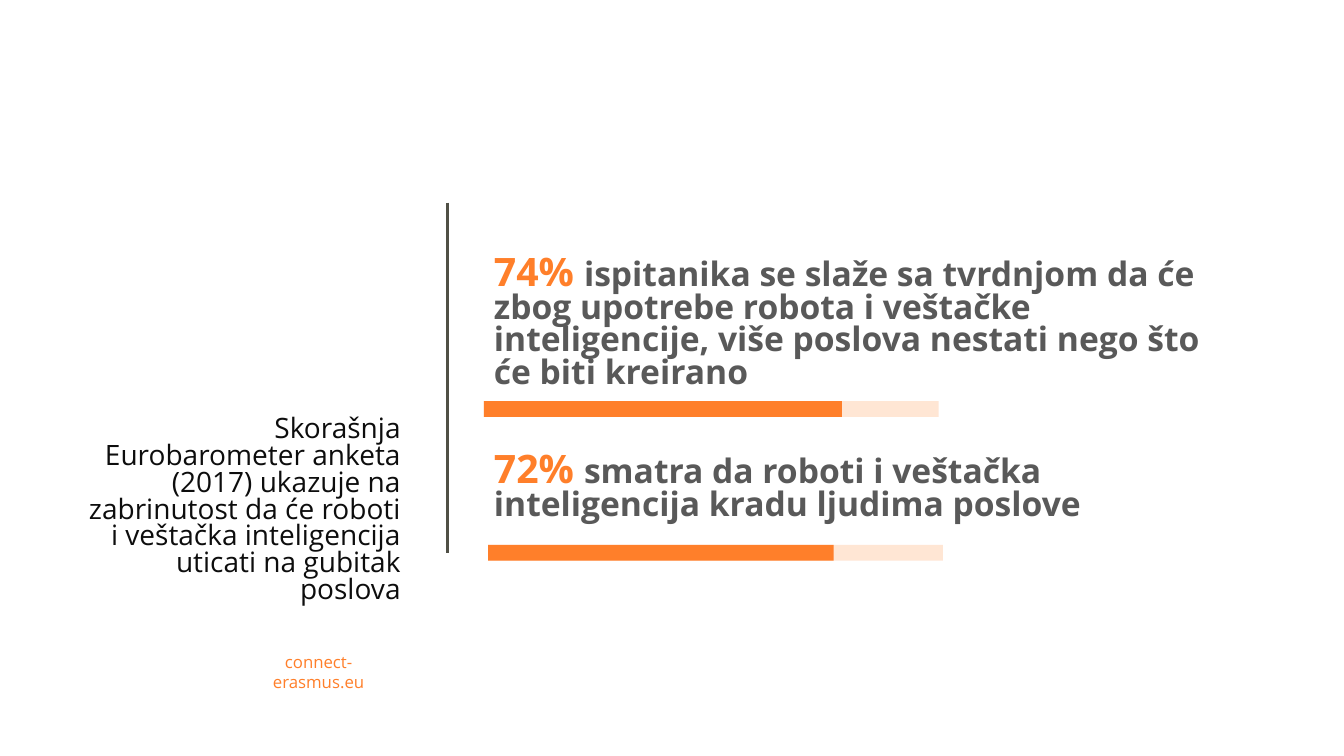
from dataclasses import dataclass

from lxml import etree
from pptx import Presentation
from pptx.dml.color import RGBColor
from pptx.enum.shapes import MSO_CONNECTOR, MSO_SHAPE
from pptx.enum.text import MSO_ANCHOR, PP_ALIGN
from pptx.oxml.ns import qn
from pptx.slide import Slide
from pptx.text.text import TextFrame
from pptx.util import Emu, Pt

STRAIGHT = MSO_CONNECTOR.STRAIGHT
RECTANGLE = MSO_SHAPE.RECTANGLE
TOP, MIDDLE, BOTTOM = MSO_ANCHOR.TOP, MSO_ANCHOR.MIDDLE, MSO_ANCHOR.BOTTOM
LEFT, CENTER, RIGHT = PP_ALIGN.LEFT, PP_ALIGN.CENTER, PP_ALIGN.RIGHT
EMU_PER_PX = 9525


@dataclass(frozen=True)
class Theme:
    font: str = "Open Sans"
    accent: str = "FF7F2A"
    track: str = "FFE6D4"
    rule: str = "505046"
    body: str = "0D0D0D"
    statement: str = "595959"
    footer_size: int = 12
    body_size: int = 20
    statement_size: int = 24
    percent_size: int = 28
    line_spacing: float = 0.8
    statement_gap: float = 44.5
    rule_width: int = 2


@dataclass(frozen=True)
class Box:
    left: int
    top: int
    width: int
    height: int


@dataclass(frozen=True)
class Finding:
    percent: str
    statement: str
    bar: Box
    filled: int


@dataclass(frozen=True)
class Span:
    text: str
    size: int
    color: str
    bold: bool = False


@dataclass(frozen=True)
class Label:
    box: Box
    span: Span
    anchor: MSO_ANCHOR
    alignment: PP_ALIGN
    line_spacing: float


THEME = Theme()
STATEMENTS_BOX = Box(461, 156, 693, 484)
STATEMENTS_INSET = 88
FINDINGS = [
    Finding(
        "74%",
        "ispitanika se slaže sa tvrdnjom da će zbog upotrebe robota i veštačke "
        "inteligencije, više poslova nestati nego što će biti kreirano",
        Box(461, 382, 433, 15),
        341,
    ),
    Finding(
        "72%",
        "smatra da roboti i veštačka inteligencija kradu ljudima poslove",
        Box(465, 519, 433, 15),
        329,
    ),
]
LABELS = [
    Label(
        Box(219, 625, 169, 29),
        Span("connect-erasmus.eu", THEME.footer_size, THEME.accent),
        MIDDLE, CENTER, 1.0,
    ),
    Label(
        Box(67, 139, 324, 442),
        Span(
            "Skorašnja Eurobarometer anketa (2017) ukazuje na zabrinutost da će "
            "roboti i veštačka inteligencija uticati na gubitak poslova",
            THEME.body_size, THEME.body,
        ),
        BOTTOM, RIGHT, THEME.line_spacing,
    ),
]


def px(length: int) -> Emu:
    return Emu(length * EMU_PER_PX)


def place(box: Box) -> tuple[Emu, Emu, Emu, Emu]:
    return px(box.left), px(box.top), px(box.width), px(box.height)


def add_text_frame(slide: Slide, box: Box, anchor: MSO_ANCHOR) -> TextFrame:
    text_frame = slide.shapes.add_textbox(*place(box)).text_frame
    text_frame.word_wrap = True
    text_frame.vertical_anchor = anchor
    return text_frame


def add_span(paragraph, span: Span) -> None:
    run = paragraph.add_run()
    run.text = span.text
    run.font.name = THEME.font
    run.font.size = Pt(span.size)
    run.font.bold = span.bold
    run.font.color.rgb = RGBColor.from_string(span.color)


def add_label(slide: Slide, label: Label) -> None:
    paragraph = add_text_frame(slide, label.box, label.anchor).paragraphs[0]
    paragraph.alignment = label.alignment
    paragraph.line_spacing = label.line_spacing
    add_span(paragraph, label.span)


def add_rule(slide: Slide, left: int, top: int, bottom: int) -> None:
    rule = slide.shapes.add_connector(STRAIGHT, px(left), px(top), px(left), px(bottom))
    rule.line.color.rgb = RGBColor.from_string(THEME.rule)
    rule.line.width = Pt(THEME.rule_width)
    etree.SubElement(rule._element.spPr, qn("a:effectLst"))


def add_statements(slide: Slide, findings: list[Finding]) -> None:
    text_frame = add_text_frame(slide, STATEMENTS_BOX, TOP)
    text_frame.margin_top = px(STATEMENTS_INSET)
    for index, finding in enumerate(findings):
        paragraph = text_frame.add_paragraph() if index else text_frame.paragraphs[0]
        paragraph.alignment = LEFT
        paragraph.line_spacing = THEME.line_spacing
        paragraph.space_before = Pt(THEME.statement_gap if index else 0)
        add_span(paragraph, Span(f"{finding.percent} ", THEME.percent_size, THEME.accent, True))
        add_span(paragraph, Span(finding.statement, THEME.statement_size, THEME.statement, True))


def add_bar(slide: Slide, finding: Finding) -> None:
    for width, color in ((finding.bar.width, THEME.track), (finding.filled, THEME.accent)):
        box = Box(finding.bar.left, finding.bar.top, width, finding.bar.height)
        shape = slide.shapes.add_shape(RECTANGLE, *place(box))
        shape.shadow.inherit = False
        shape.fill.solid()
        shape.fill.fore_color.rgb = RGBColor.from_string(color)
        shape.line.fill.background()


def main() -> None:
    presentation = Presentation()
    presentation.slide_width = px(1280)
    presentation.slide_height = px(720)
    slide = presentation.slides.add_slide(presentation.slide_layouts[6])
    for label in LABELS:
        add_label(slide, label)
    add_rule(slide, 426, 193, 527)
    add_statements(slide, FINDINGS)
    for finding in reversed(FINDINGS):
        add_bar(slide, finding)
    presentation.save("out.pptx")


if __name__ == "__main__":
    main()
